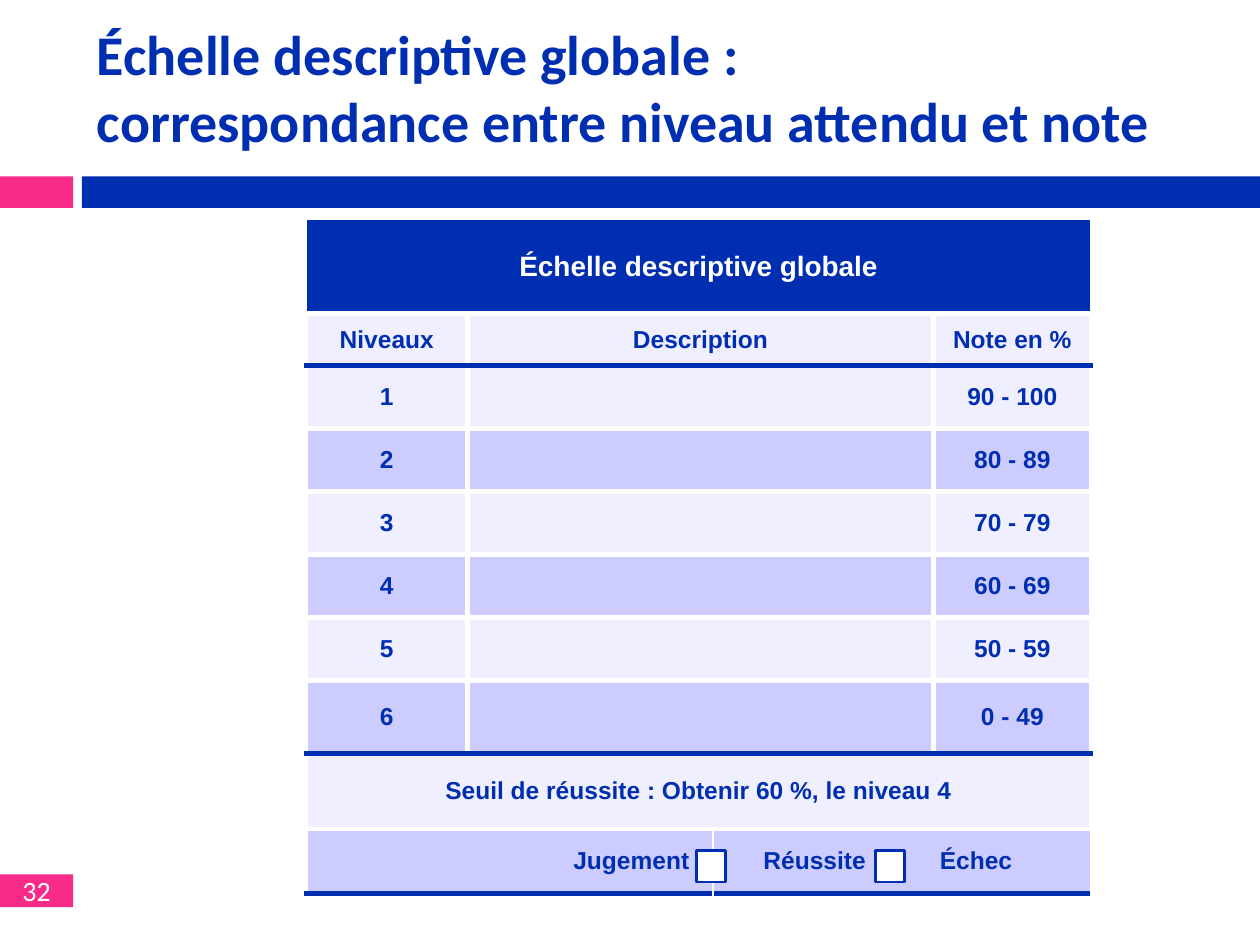
from dataclasses import dataclass

from lxml.etree import SubElement
from pptx import Presentation
from pptx.dml.color import RGBColor as Rgb
from pptx.enum.shapes import MSO_SHAPE as Shape
from pptx.enum.text import MSO_ANCHOR as Anchor, PP_ALIGN as Align
from pptx.oxml import parse_xml
from pptx.oxml.ns import nsdecls, qn
from pptx.util import Emu, Inches, Pt


@dataclass(frozen=True)
class Theme:
    blue: str = "002EB0"
    pink: str = "F82C88"
    white: str = "FFFFFF"
    pale: str = "EFEFFF"
    lilac: str = "CCCCFF"
    head: str = "Calibri"
    body: str = "Arial"
    title: int = 32
    large: int = 16
    small: int = 14
    rule: float = 3
    edge: float = 1.5


T = Theme()
WIDE, HIGH = Inches(10), Inches(7.5)

NOTES = ["90 - 100", "80 - 89", "70 - 79", "60 - 69", "50 - 59", "0 - 49"]
COLS = [12.8, 19.5, 17.5, 12.5]
ROWS = [10, 5.47] + [6.67] * 5 + [7.73, 8, 6.8]
HEAD, LABEL, LEVEL, PASS, JUDGE = 0, 1, 2, 8, 9
RULED = (LABEL, PASS - 1, JUDGE)  # rows closed by a blue rule


def across(pct):
    return Emu(round(WIDE * pct / 100))


def down(pct):
    return Emu(round(HIGH * pct / 100))


def area(x, y, w, h):
    """Turn percentages of the slide into left, top, width, height."""
    return across(x), down(y), across(w), down(h)


def style(para, size, color, font, bold=True, align=Align.LEFT):
    para.alignment = align
    for run in para.runs:
        face = run.font
        face.size, face.name, face.bold = Pt(size), font, bold
        face.color.rgb = Rgb.from_string(color)


def add_rect(slide, place, fill, line=None):
    rect = slide.shapes.add_shape(Shape.RECTANGLE, *place)
    rect.shadow.inherit = False
    rect.fill.solid()
    rect.fill.fore_color.rgb = Rgb.from_string(fill)
    if line:
        rect.line.color.rgb = Rgb.from_string(line)
        rect.line.width = Pt(T.edge)
    else:
        rect.line.fill.background()
    return rect


def add_title(slide, text):
    frame = slide.shapes.add_textbox(*area(6.7, 1.33, 89.2, 15.6)).text_frame
    frame.word_wrap = True
    frame.vertical_anchor = Anchor.MIDDLE
    frame.text = text
    style(frame.paragraphs[0], T.title, T.blue, T.head)


def add_number(slide, text):
    frame = add_rect(slide, area(0, 92.53, 5.8, 3.47), T.pink).text_frame
    frame.margin_top = frame.margin_bottom = 0
    frame.vertical_anchor = Anchor.MIDDLE
    frame.text = text
    style(frame.paragraphs[0], T.large, T.white, T.head, False, Align.CENTER)


def set_edges(cell, edges):
    """Draw the given borders, a dict from side (L, R, T, B) to colour."""
    props = cell._tc.get_or_add_tcPr()
    sides = [s for s in "LRTB" if s in edges]
    for i, side in enumerate(sides):
        props.insert(i, parse_xml(
            f'<a:ln{side} {nsdecls("a")} w="{Pt(T.rule)}"><a:solidFill>'
            f'<a:srgbClr val="{edges[side]}"/></a:solidFill></a:ln{side}>'))


def pick_edges(row, col):
    if row == HEAD:
        return {"B": T.white}
    edges = dict.fromkeys("LRTB", T.white)
    if row - 1 in RULED:
        edges["T"] = T.blue
    if row in RULED:
        edges["B"] = T.blue
    if row == JUDGE:  # no upright line inside this row
        if col > 0:
            del edges["L"]
        if col < len(COLS) - 1:
            del edges["R"]
    return edges


def pick_fill(row):
    if row == HEAD:
        return T.blue
    return T.pale if row == LABEL or row % 2 == 0 else T.lilac


def fill_cell(cell, text, size=T.small, color=T.blue, align=Align.CENTER,
              tabs=()):
    cell.text = text
    para = cell.text_frame.paragraphs[0]
    if tabs:
        stops = SubElement(para._p.get_or_add_pPr(), qn("a:tabLst"))
        for pct in tabs:
            SubElement(stops, qn("a:tab"), pos=str(across(pct)), algn="l")
    style(para, size, color, T.body, align=align)


def add_scale(slide):
    place = area(24.3, 23.2, sum(COLS), sum(ROWS))
    table = slide.shapes.add_table(len(ROWS), len(COLS), *place).table
    table.first_row = table.horz_banding = False
    for col, pct in zip(table.columns, COLS):
        col.width = across(pct)
    for r, pct in enumerate(ROWS):
        table.rows[r].height = down(pct)
        for c in range(len(COLS)):
            cell = table.cell(r, c)
            cell.fill.solid()
            cell.fill.fore_color.rgb = Rgb.from_string(pick_fill(r))
            set_edges(cell, pick_edges(r, c))
            cell.vertical_anchor = Anchor.MIDDLE
            cell.margin_left = cell.margin_right = Inches(0.07)
            cell.margin_top = cell.margin_bottom = 0

    spans = [(HEAD, 0, 3), (PASS, 0, 3), (JUDGE, 0, 1), (JUDGE, 2, 3)]
    spans += [(r, 1, 2) for r in range(LABEL, PASS)]
    for r, first, last in spans:
        table.cell(r, first).merge(table.cell(r, last))

    fill_cell(table.cell(HEAD, 0), "Échelle descriptive globale",
              T.large, T.white)
    for c, text in ((0, "Niveaux"), (1, "Description"), (3, "Note en %")):
        fill_cell(table.cell(LABEL, c), text)
    for i, note in enumerate(NOTES):
        fill_cell(table.cell(LEVEL + i, 0), str(i + 1))
        fill_cell(table.cell(LEVEL + i, 3), note)
    fill_cell(table.cell(PASS, 0),
              "Seuil de réussite : Obtenir 60 %, le niveau 4")
    fill_cell(table.cell(JUDGE, 0), "Jugement :", align=Align.RIGHT)
    fill_cell(table.cell(JUDGE, 2), "\tRéussite\tÉchec", align=Align.LEFT,
              tabs=(3.3, 17.3))


def main():
    deck = Presentation()
    deck.slide_width, deck.slide_height = WIDE, HIGH
    slide = deck.slides.add_slide(deck.slide_layouts[6])
    add_rect(slide, area(0, 18.67, 5.8, 3.33), T.pink)
    add_rect(slide, area(6.5, 18.67, 93.5, 3.33), T.blue)
    add_number(slide, "32")
    add_title(slide, "Échelle descriptive globale :\v"
                     "correspondance entre niveau attendu et note")
    add_scale(slide)
    for x in (55.3, 69.5):
        add_rect(slide, area(x, 90, 2.3, 3.33), T.white, T.blue)
    deck.save("out.pptx")


if __name__ == "__main__":
    main()
